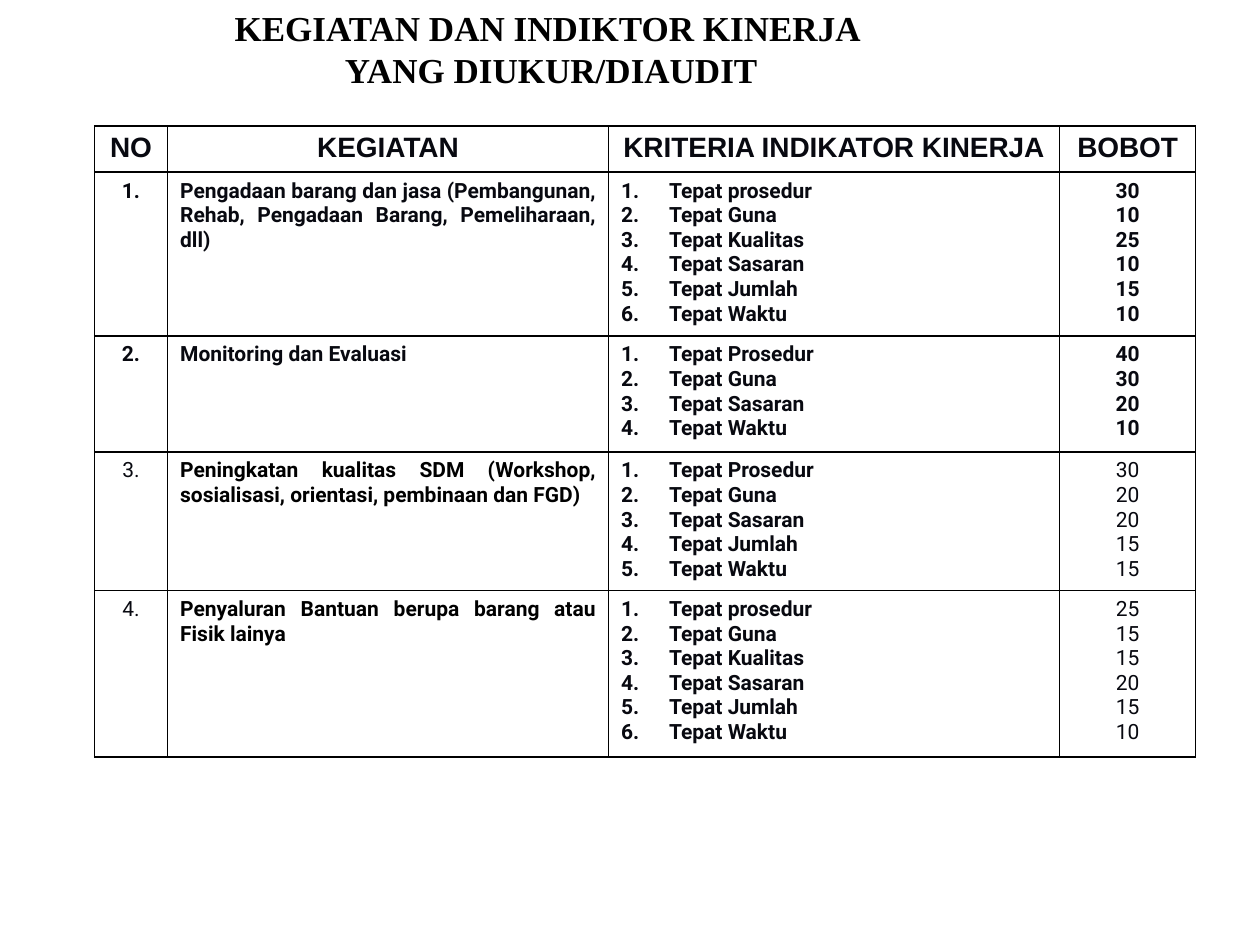
import pptx
import pptx.dml.color
import pptx.enum.text
import pptx.oxml.ns
import pptx.util
from lxml import etree

Inches = pptx.util.Inches
Pt = pptx.util.Pt
ALIGN = pptx.enum.text.PP_ALIGN
INK, BLACK, WHITE = "080910", "000000", "FFFFFF"
HANGING = 0.38

HEADERS = ["NO", "KEGIATAN", "KRITERIA INDIKATOR KINERJA", "BOBOT"]
COLUMN_WIDTHS = [0.58, 3.5, 3.58, 1.08]
ROW_HEIGHTS = [0.34, 1.27, 0.92, 1.08, 1.32]

# Activity, its alignment, indent and colour, bold figures, weight of each criterion
ACTIVITIES = [
    ("Pengadaan barang dan jasa (Pembangunan, Rehab, Pengadaan Barang, Pemeliharaan, dll)",
     ALIGN.JUSTIFY, 0, INK, True,
     [("prosedur", 30), ("Guna", 10), ("Kualitas", 25),
      ("Sasaran", 10), ("Jumlah", 15), ("Waktu", 10)]),
    ("Monitoring dan Evaluasi", ALIGN.LEFT, HANGING, INK, True,
     [("Prosedur", 40), ("Guna", 30), ("Sasaran", 20), ("Waktu", 10)]),
    ("Peningkatan kualitas SDM (Workshop, sosialisasi, orientasi, pembinaan dan FGD)",
     ALIGN.JUSTIFY, 0, BLACK, False,
     [("Prosedur", 30), ("Guna", 20), ("Sasaran", 20), ("Jumlah", 15), ("Waktu", 15)]),
    ("Penyaluran Bantuan berupa barang atau Fisik lainya",
     ALIGN.JUSTIFY, 0, BLACK, False,
     [("prosedur", 25), ("Guna", 15), ("Kualitas", 15),
      ("Sasaran", 20), ("Jumlah", 15), ("Waktu", 10)]),
]


def rgb(value):
    return pptx.dml.color.RGBColor.from_string(value)


def add_element(parent, tag, **attributes):
    return etree.SubElement(parent, pptx.oxml.ns.qn(tag), **attributes)


class SlideBuilder:
    """Holds the style and the current slide."""

    title_font, header_font, body_font = "Times New Roman", "Arial", "Roboto"
    title_size, header_size, body_size = 20, 16, 12

    def __init__(self, presentation):
        self.slide = presentation.slides.add_slide(presentation.slide_layouts[5])

    def format_font(self, paragraph, name, size, color, bold):
        font = paragraph.font
        font.name, font.size, font.bold = name, Pt(size), bold
        font.color.rgb = rgb(color)

    def add_title(self, lines, left, top, width, height):
        title = self.slide.shapes.title
        title.left, title.top = Inches(left), Inches(top)
        title.width, title.height = Inches(width), Inches(height)
        frame = title.text_frame
        frame.word_wrap = True
        frame.auto_size = pptx.enum.text.MSO_AUTO_SIZE.SHAPE_TO_FIT_TEXT
        frame.vertical_anchor = pptx.enum.text.MSO_ANCHOR.TOP
        frame.text = "\n".join(lines)
        for paragraph in frame.paragraphs:
            paragraph.alignment = ALIGN.CENTER
            self.format_font(paragraph, self.title_font, self.title_size, BLACK, True)

    def add_table(self, left, top, widths, heights):
        frame = self.slide.shapes.add_table(
            len(heights), len(widths), Inches(left), Inches(top),
            Inches(sum(widths)), Inches(sum(heights)))
        table = frame.table
        table.first_row = table.horz_banding = False
        for column, width in zip(table.columns, widths):
            column.width = Inches(width)
        for row, height in zip(table.rows, heights):
            row.height = Inches(height)
        return table

    def add_borders(self, cell):
        properties = cell._tc.get_or_add_tcPr()
        for index, side in enumerate(["a:lnL", "a:lnR", "a:lnT", "a:lnB"]):
            line = add_element(properties, side, w=str(Pt(1)))
            fill = add_element(line, "a:solidFill")
            add_element(fill, "a:srgbClr", val=BLACK)
            properties.insert(index, line)

    def fill_cell(self, cell, lines, align=ALIGN.CENTER, indent=HANGING, color=INK,
                  bold=True, numbered=False, name=body_font, size=body_size):
        cell.fill.solid()
        cell.fill.fore_color.rgb = rgb(WHITE)
        self.add_borders(cell)
        cell.text_frame.text = "\n".join(lines)
        for paragraph in cell.text_frame.paragraphs:
            paragraph.alignment = align
            properties = paragraph._p.get_or_add_pPr()
            properties.set("marL", str(Inches(indent)))
            properties.set("indent", str(-Inches(indent)))
            if numbered:
                add_element(properties, "a:buFont", typeface="+mj-lt")
                add_element(properties, "a:buAutoNum", type="arabicPeriod")
            self.format_font(paragraph, name, size, color, bold)


def main():
    presentation = pptx.Presentation()
    presentation.slide_width, presentation.slide_height = Inches(10), Inches(7.5)
    builder = SlideBuilder(presentation)

    # Title
    builder.add_title(["KEGIATAN DAN INDIKTOR KINERJA ", "YANG DIUKUR/DIAUDIT"],
                      0.75, 0, 7.25, 0.77)

    # Table header
    table = builder.add_table(0.75, 1, COLUMN_WIDTHS, ROW_HEIGHTS)
    for column, header in enumerate(HEADERS):
        builder.fill_cell(table.cell(0, column), [header],
                          name=builder.header_font, size=builder.header_size)

    # Activities with their criteria and weights
    for row, (activity, align, indent, color, bold, criteria) in enumerate(ACTIVITIES, 1):
        number, name, indicators, weights = table.rows[row].cells
        builder.fill_cell(number, [f"{row}."], bold=bold)
        builder.fill_cell(name, [activity], align, indent, color)
        builder.fill_cell(indicators, [f"Tepat {word}" for word, _ in criteria],
                          ALIGN.LEFT, numbered=True)
        builder.fill_cell(weights, [str(weight) for _, weight in criteria], bold=bold)

    presentation.save("out.pptx")


if __name__ == "__main__":
    main()
